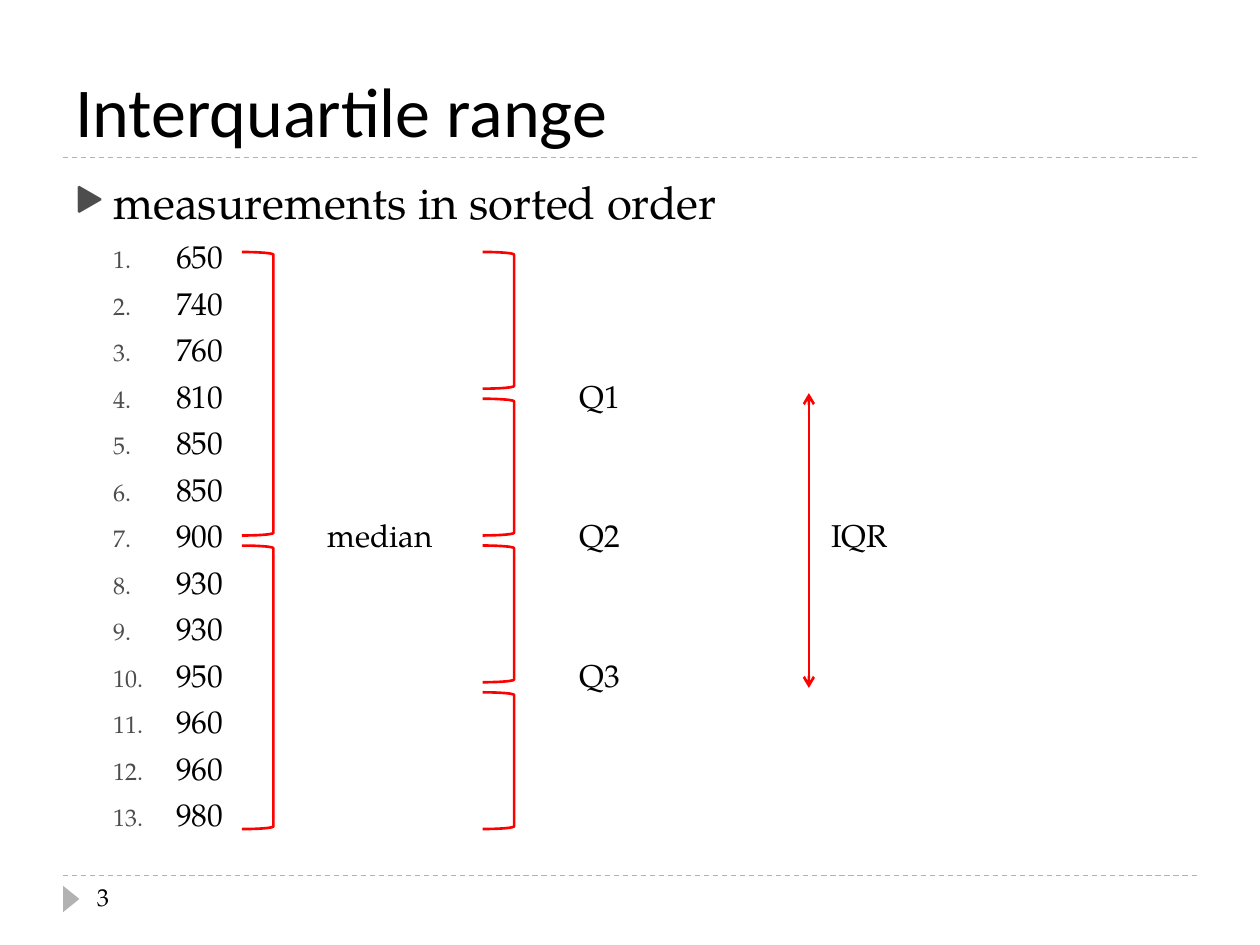
from lxml.etree import SubElement
from pptx import Presentation
from pptx.dml.color import RGBColor
from pptx.enum.dml import MSO_LINE_DASH_STYLE as Dash
from pptx.enum.shapes import MSO_CONNECTOR as Connector, MSO_SHAPE as Shape
from pptx.enum.text import MSO_ANCHOR as Anchor
from pptx.oxml.ns import qn
from pptx.util import Inches, Pt

BLACK = RGBColor(0x00, 0x00, 0x00)
RED = RGBColor(0xFF, 0x00, 0x00)
GRAY = RGBColor(0xB2, 0xB2, 0xB2)
BULLET_GRAY = RGBColor(0x4D, 0x4D, 0x4D)
HEADING_FONT = "Calibri"
BODY_FONT = "TeX Gyre Pagella"

MEASUREMENTS = [
    "650", "740", "760", "810\t\t\tQ1", "850", "850",
    "900\tmedian\t\tQ2\t\tIQR",
    "930", "930", "950\t\t\tQ3", "960", "960", "980",
]
TAB_SIZE = 1
BRACKET_TOP = 2
BRACKET_SPAN = 4.58
BRACKET_GAP = 0.08


def add_text_frame(slide, left, top, width, height):
    box = slide.shapes.add_textbox(
        Inches(left), Inches(top), Inches(width), Inches(height))
    box.text_frame.word_wrap = True
    return box.text_frame


def style_font(paragraph, size, name=BODY_FONT):
    paragraph.font.size = Pt(size)
    paragraph.font.name = name
    paragraph.font.color.rgb = BLACK


def add_bullet(paragraph, margin, indent, tag, **attributes):
    properties = paragraph._p.get_or_add_pPr()
    properties.set("marL", str(Inches(margin)))
    properties.set("indent", str(Inches(indent)))
    properties.set("defTabSz", str(Inches(TAB_SIZE)))
    color = SubElement(properties, qn("a:buClr"))
    SubElement(color, qn("a:srgbClr"), val=str(BULLET_GRAY))
    SubElement(properties, qn("a:buSzPct"), val="76000")
    SubElement(properties, qn("a:buFont"), typeface=BODY_FONT)
    SubElement(properties, qn(tag), **attributes)


def add_label(slide, bounds, text, size, font_name, anchor=Anchor.TOP):
    frame = add_text_frame(slide, *bounds)
    frame.vertical_anchor = anchor
    paragraph = frame.paragraphs[0]
    paragraph.text = text
    style_font(paragraph, size, font_name)


def add_measurements(slide):
    frame = add_text_frame(slide, 0.5, 1.33, 9, 5.4)
    heading = frame.paragraphs[0]
    heading.text = "measurements in sorted order"
    heading.space_before = Pt(6)
    add_bullet(heading, 0.3, -0.3, "a:buChar", char="▶")
    style_font(heading, 26)
    for measurement in MEASUREMENTS:
        paragraph = frame.add_paragraph()
        paragraph.text = measurement
        paragraph.level = 1
        paragraph.space_before = Pt(5)
        add_bullet(paragraph, 0.8, -0.5, "a:buAutoNum", type="arabicPeriod")
        style_font(paragraph, 18)


def add_line(slide, start, end, color, width):
    line = slide.shapes.add_connector(
        Connector.STRAIGHT, *map(Inches, start + end))
    line.line.color.rgb = color
    line.line.width = Pt(width)
    SubElement(line._element.spPr, qn("a:effectLst"))
    return line


def add_divider(slide, top):
    divider = add_line(slide, (0.5, top), (9.5, top), GRAY, 0.75)
    divider.line.dash_style = Dash.DASH


def add_range_arrow(slide):
    arrow = add_line(slide, (6.42, 3.12), (6.42, 5.46), RED, 1.5)
    outline = arrow.line._get_or_add_ln()
    for end in ("a:headEnd", "a:tailEnd"):
        SubElement(outline, qn(end), type="arrow")


def add_brackets(slide, left, count):
    height = (BRACKET_SPAN - BRACKET_GAP * (count - 1)) / count
    for index in range(count):
        top = BRACKET_TOP + index * (height + BRACKET_GAP)
        bracket = slide.shapes.add_shape(
            Shape.RIGHT_BRACKET, Inches(left), Inches(top),
            Inches(0.25), Inches(height))
        bracket.shadow.inherit = False
        bracket.fill.background()
        bracket.line.color.rgb = RED
        bracket.line.width = Pt(1.5)


def add_page_marker(slide):
    marker = slide.shapes.add_shape(
        Shape.ISOSCELES_TRIANGLE, Inches(0.46), Inches(7.07),
        Inches(0.21), Inches(0.13))
    marker.rotation = 90
    marker.shadow.inherit = False
    marker.fill.solid()
    marker.fill.fore_color.rgb = GRAY
    marker.line.fill.background()


def main():
    presentation = Presentation()
    presentation.slide_width = Inches(10)
    presentation.slide_height = Inches(7.5)
    slide = presentation.slides.add_slide(presentation.slide_layouts[6])

    for top in (6.95, 1.25):
        add_divider(slide, top)
    add_page_marker(slide)
    add_label(slide, (0.5, 0.17, 9, 1.08), "Interquartile range",
              40, HEADING_FONT, Anchor.BOTTOM)
    add_measurements(slide)
    add_label(slide, (0.67, 6.95, 2.17, 0.4), "3", 14, BODY_FONT)
    add_brackets(slide, 1.92, 2)
    add_brackets(slide, 3.83, 4)
    add_range_arrow(slide)

    presentation.save("out.pptx")


if __name__ == "__main__":
    main()
